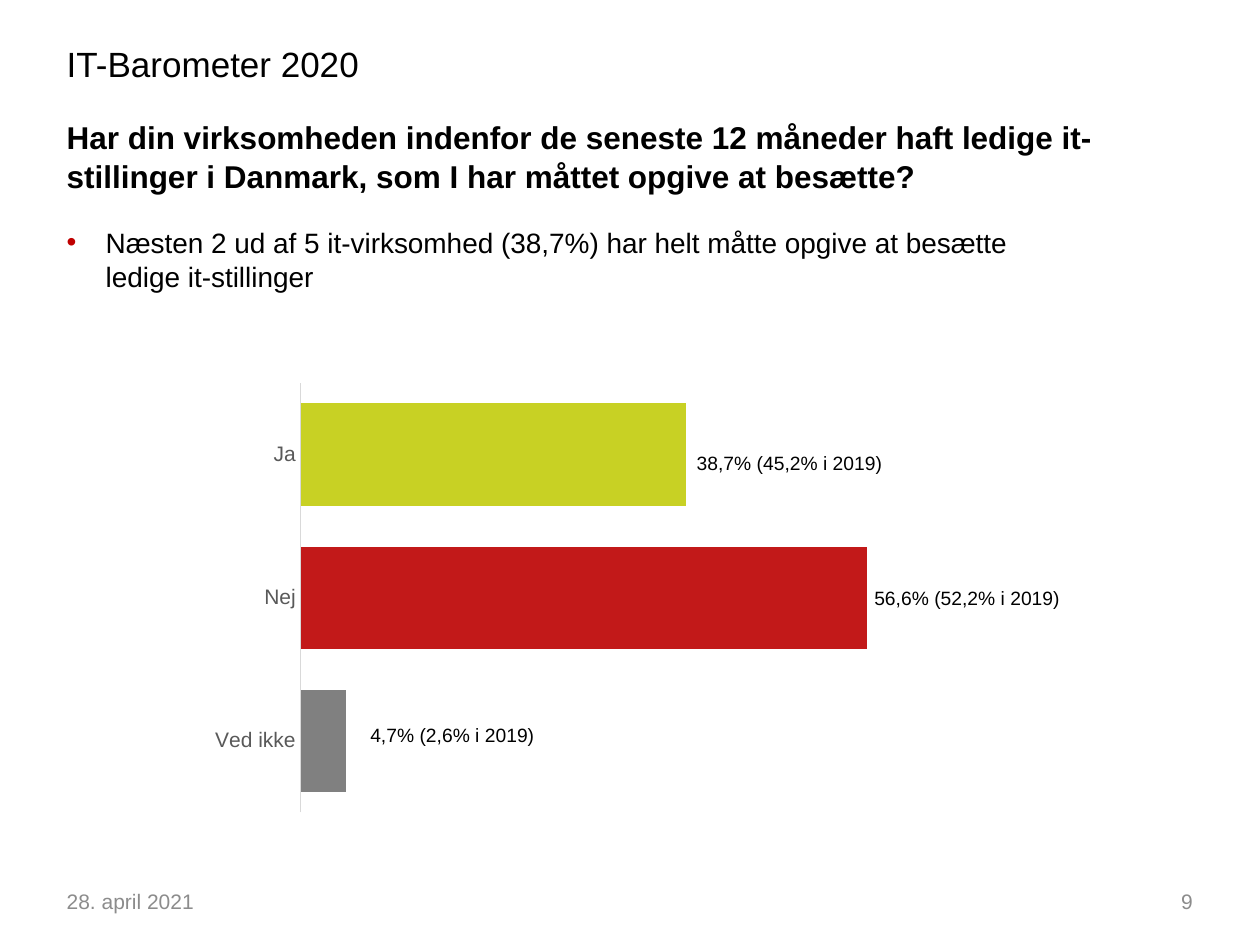
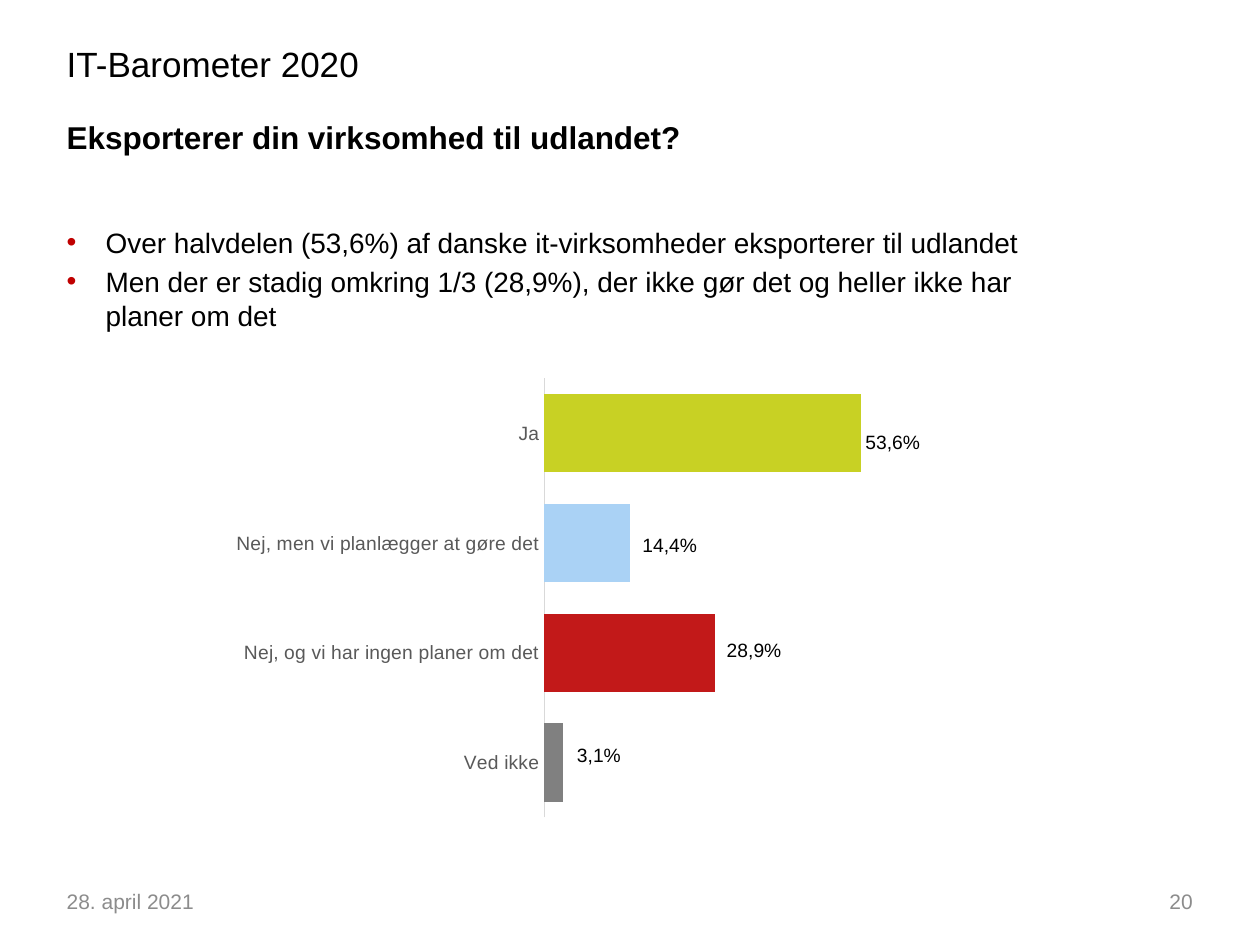
import pptx
import pptx.util
import pptx.oxml
import pptx.oxml.ns
import pptx.chart.data
import pptx.dml.color
import pptx.enum.chart
import pptx.enum.text

Pt = pptx.util.Pt
RGB = pptx.dml.color.RGBColor.from_string
ALIGN = pptx.enum.text.PP_ALIGN
ANCHOR = pptx.enum.text.MSO_ANCHOR
FONT = "Arial"
COLORS = {
    "text": "000000", "footer": "8C8C8C", "axis_text": "595959",
    "axis_line": "D9D9D9", "bullet": "C00000",
    "lime": "C8D124", "red": "C21919", "blue": "AAD2F5", "grey": "808080",
}
MARGIN = 31
INDENT = 22.3

# Bars run from the bottom up: category, value, colour.
# Labels: text, left, top, width. Plot: x, y, width, height as shares of the chart.
SLIDES = [
    {
        "number": "9",
        "question": "Har din virksomheden indenfor de seneste 12 måneder haft ledige "
                    "it-stillinger i Danmark, som I har måttet opgive at besætte?",
        "findings": ["Næsten 2 ud af 5 it-virksomhed (38,7%) har helt måtte opgive "
                     "at besætte ledige it-stillinger"],
        "chart": (115.2, 213.8, 404.6, 255.6),
        "plot": (0.14, 0.02, 0.8, 0.96),
        "axis_size": 12,
        "bars": [("Ved ikke", 8, "grey"), ("Nej", 100, "red"), ("Ja", 68, "lime")],
        "labels": [("38,7% (45,2% i 2019)", 391, 254.2, 121),
                   ("56,6% (52,2% i 2019)", 492.5, 331.2, 121),
                   ("4,7% (2,6% i 2019)", 204.5, 409.7, 108.7)],
    },
    {
        "number": "20",
        "question": "Eksporterer din virksomhed til udlandet?",
        "findings": ["Over halvdelen (53,6%) af danske it-virksomheder eksporterer til udlandet",
                     "Men der er stadig omkring 1/3 (28,9%), der ikke gør det og heller "
                     "ikke har planer om det"],
        "chart": (126, 211, 393.8, 261.4),
        "plot": (0.47, 0.02, 0.46, 0.96),
        "axis_size": 11,
        "bars": [("Ved ikke", 6, "grey"),
                 ("Nej, og vi har ingen planer om det", 54, "red"),
                 ("Nej, men vi planlægger at gøre det", 27, "blue"),
                 ("Ja", 100, "lime")],
        "labels": [("53,6%", 487.4, 242.6, 46), ("14,4%", 360, 301, 46),
                   ("28,9%", 408.2, 361.4, 46), ("3,1%", 322.6, 421.2, 39.6)],
    },
]


def style_font(font, size, color):
    font.name = FONT
    font.size = Pt(size)
    font.color.rgb = RGB(COLORS[color])


def add_text(page, frame, lines, size, color="text", bold=False, bullet=False,
             align=ALIGN.LEFT, anchor=ANCHOR.TOP, wrap=True, spacing=None):
    box = page.shapes.add_textbox(*map(Pt, frame))
    box.text_frame.text = "\n".join(lines)
    box.text_frame.word_wrap = wrap
    box.text_frame.vertical_anchor = anchor
    for index, para in enumerate(box.text_frame.paragraphs):
        para.alignment = align
        if spacing:
            para.line_spacing = spacing
        if index:
            para.space_before = Pt(size * 0.2)
        if bullet:
            props = para._p.get_or_add_pPr()
            props.set("marL", str(Pt(INDENT)))
            props.set("indent", str(-Pt(INDENT)))
            for xml in (f'<a:buClr %s><a:srgbClr val="{COLORS["bullet"]}"/></a:buClr>',
                        f'<a:buFont %s typeface="{FONT}"/>', '<a:buChar %s char="•"/>'):
                props.append(pptx.oxml.parse_xml(xml % pptx.oxml.ns.nsdecls("a")))
        for span in para.runs:
            style_font(span.font, size, color)
            span.font.bold = bold


deck = pptx.Presentation()
deck.slide_width, deck.slide_height = Pt(720), Pt(540)

for content in SLIDES:
    page = deck.slides.add_slide(deck.slide_layouts[6])

    # Bar chart
    data = pptx.chart.data.CategoryChartData()
    data.categories = [name for name, value, color in content["bars"]]
    data.add_series("Series 1", [value for name, value, color in content["bars"]])
    chart = page.shapes.add_chart(pptx.enum.chart.XL_CHART_TYPE.BAR_CLUSTERED,
                                  *map(Pt, content["chart"]), data).chart
    chart.has_legend = False
    chart.has_title = False
    style_font(chart.font, 10, "text")

    plot = chart.plots[0]
    plot.gap_width = 40
    plot.overlap = -25
    plot.vary_by_categories = False
    series = plot.series[0]
    series.format.fill.solid()
    series.format.fill.fore_color.rgb = RGB(COLORS["red"])
    for index, (name, value, color) in enumerate(content["bars"]):
        if color != "red":
            fill = series.points[index].format.fill
            fill.solid()
            fill.fore_color.rgb = RGB(COLORS[color])

    # Axes
    tick_none = pptx.enum.chart.XL_TICK_MARK.NONE
    categories = chart.category_axis
    categories.major_tick_mark = categories.minor_tick_mark = tick_none
    categories.format.line.color.rgb = RGB(COLORS["axis_line"])
    categories.format.line.width = Pt(0.75)
    style_font(categories.tick_labels.font, content["axis_size"], "axis_text")
    values = chart.value_axis
    values.minimum_scale, values.maximum_scale = 0, 100
    values.has_major_gridlines = False
    values.visible = False

    # Fixed plot area
    x, y, width, height = content["plot"]
    area = chart._chartSpace.chart.plotArea
    for layout in area.findall(pptx.oxml.ns.qn("c:layout")):
        area.remove(layout)
    area.insert(0, pptx.oxml.parse_xml(
        f'<c:layout {pptx.oxml.ns.nsdecls("c")}><c:manualLayout>'
        '<c:layoutTarget val="inner"/><c:xMode val="edge"/><c:yMode val="edge"/>'
        f'<c:x val="{x}"/><c:y val="{y}"/><c:w val="{width}"/><c:h val="{height}"/>'
        '</c:manualLayout></c:layout>'))

    # Header, question and findings
    add_text(page, (MARGIN, 21, 228, 29), ["IT-Barometer 2020"], 20)
    add_text(page, (MARGIN, 62.6, 648, 40), [content["question"]], 18, bold=True, spacing=1.05)
    add_text(page, (MARGIN, 125.3, 592.6, 85), content["findings"], 16, bullet=True)

    # Bar labels
    for label, left, top, width in content["labels"]:
        add_text(page, (left, top, width, 20.6), [label], 11, wrap=False)

    # Footer
    add_text(page, (MARGIN, 500.4, 168, 29), ["28. april 2021"], 12, "footer",
             anchor=ANCHOR.MIDDLE)
    add_text(page, (520.6, 500.4, 168, 29), [content["number"]], 12, "footer",
             align=ALIGN.RIGHT, anchor=ANCHOR.MIDDLE)

deck.save("out.pptx")
